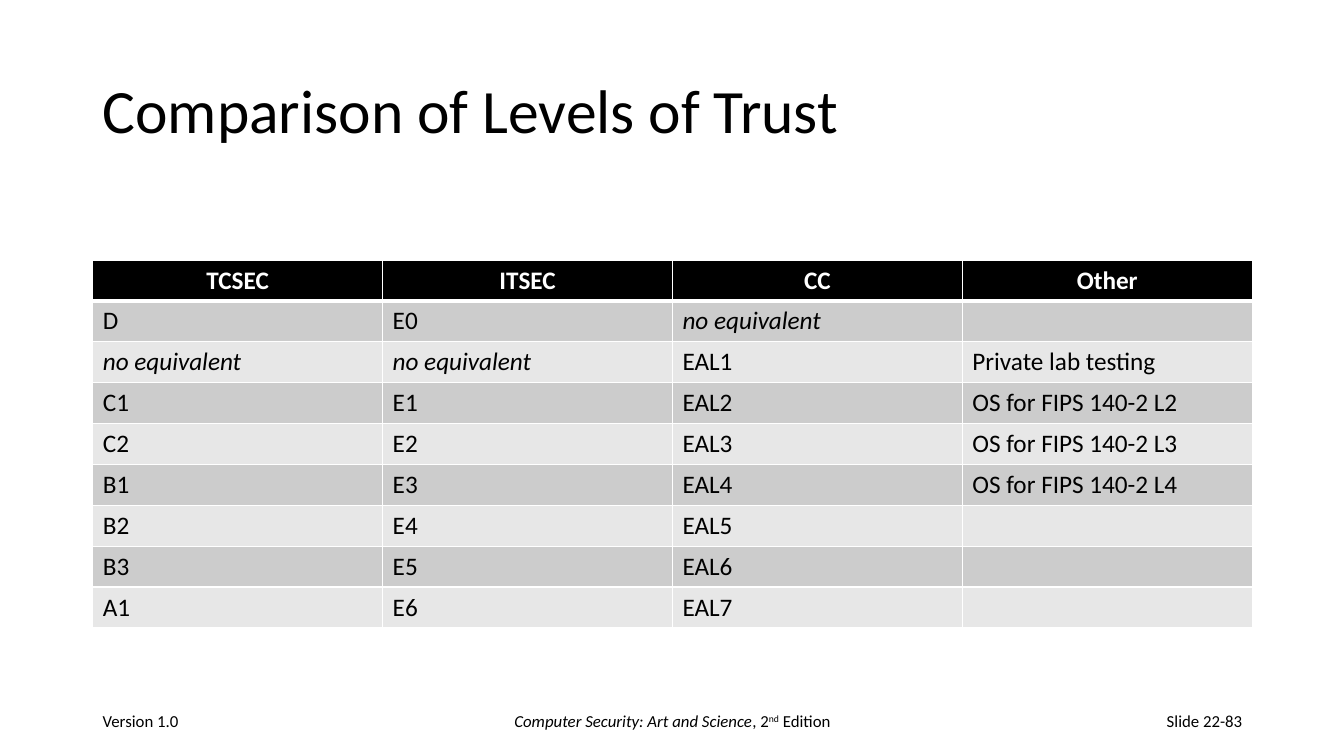
from lxml.etree import SubElement
from pptx import Presentation
from pptx.dml.color import RGBColor
from pptx.enum.text import MSO_ANCHOR, PP_ALIGN
from pptx.oxml.ns import qn
from pptx.util import Inches, Pt

FONT = "Calibri"
BLACK, WHITE = "000000", "FFFFFF"
BANDS = ("CCCCCC", "E7E7E7")
NONE = "no equivalent"

TITLE = "Comparison of Levels of Trust"
HEADER = ("TCSEC", "ITSEC", "CC", "Other")
LEVELS = [
    ("D", "E0", NONE, ""),
    (NONE, NONE, "EAL1", "Private lab testing"),
    ("C1", "E1", "EAL2", "OS for FIPS 140-2 L2"),
    ("C2", "E2", "EAL3", "OS for FIPS 140-2 L3"),
    ("B1", "E3", "EAL4", "OS for FIPS 140-2 L4"),
    ("B2", "E4", "EAL5", ""),
    ("B3", "E5", "EAL6", ""),
    ("A1", "E6", "EAL7", ""),
]
# Footer: left, width, alignment, runs as (text, style)
FOOTER = [
    (0.92, 3, PP_ALIGN.LEFT, [("Version 1.0", "")]),
    (4.42, 4.5, PP_ALIGN.CENTER, [
        ("Computer Security: Art and Science", "italic"),
        (", 2", ""), ("nd", "super"), (" Edition", ""),
    ]),
    (9.42, 3, PP_ALIGN.RIGHT, [("Slide 22-83", "")]),
]
LEFT, WIDTH = 0.92, 11.5
TABLE_TOP, TABLE_HEIGHT = 2.58, 3.65


def rgb(value):
    return RGBColor.from_string(value)


def set_font(p, size, color=BLACK):
    p.font.name, p.font.size = FONT, Pt(size)
    p.font.color.rgb = rgb(color)


def add_text(slide, box, runs, size, align=PP_ALIGN.LEFT):
    """Add a vertically centred one-line text box and return its paragraph."""
    tf = slide.shapes.add_textbox(*map(Inches, box)).text_frame
    tf.word_wrap = True
    tf.vertical_anchor = MSO_ANCHOR.MIDDLE
    p = tf.paragraphs[0]
    p.alignment = align
    set_font(p, size)
    for text, style in runs:
        r = p.add_run()
        r.text = text
        if style == "italic":
            r.font.italic = True
        elif style == "super":
            r.font._element.set("baseline", "30000")
    return p


def set_borders(cell, bottom):
    tc_pr = cell._tc.get_or_add_tcPr()
    for side, width in (("L", 1), ("R", 1), ("T", 1), ("B", bottom)):
        ln = SubElement(tc_pr, qn(f"a:ln{side}"), w=str(Pt(width)))
        fill = SubElement(ln, qn("a:solidFill"))
        SubElement(fill, qn("a:srgbClr"), val=WHITE)


def add_levels_table(slide):
    rows = [HEADER] + LEVELS
    table = slide.shapes.add_table(
        len(rows), len(HEADER), Inches(LEFT), Inches(TABLE_TOP),
        Inches(WIDTH), Inches(TABLE_HEIGHT)).table
    for row in table.rows:
        row.height = Inches(TABLE_HEIGHT / len(rows))
    for i, row in enumerate(rows):
        is_header = i == 0
        for j, text in enumerate(row):
            cell = table.cell(i, j)
            set_borders(cell, 3 if is_header else 1)
            cell.fill.solid()
            cell.fill.fore_color.rgb = rgb(BLACK if is_header else BANDS[(i - 1) % 2])
            cell.text = text
            p = cell.text_frame.paragraphs[0]
            set_font(p, 18, WHITE if is_header else BLACK)
            p.font.bold = is_header
            p.font.italic = text == NONE
            p.alignment = PP_ALIGN.CENTER if is_header else PP_ALIGN.LEFT


def main():
    prs = Presentation()
    prs.slide_width, prs.slide_height = Inches(13.33), Inches(7.5)
    slide = prs.slides.add_slide(prs.slide_layouts[6])
    title = add_text(slide, (LEFT, 0.4, WIDTH, 1.45), [(TITLE, "")], 44)
    title.line_spacing = 0.9
    add_levels_table(slide)
    for left, width, align, runs in FOOTER:
        add_text(slide, (left, 6.95, width, 0.4), runs, 12, align)
    prs.save("out.pptx")


if __name__ == "__main__":
    main()
